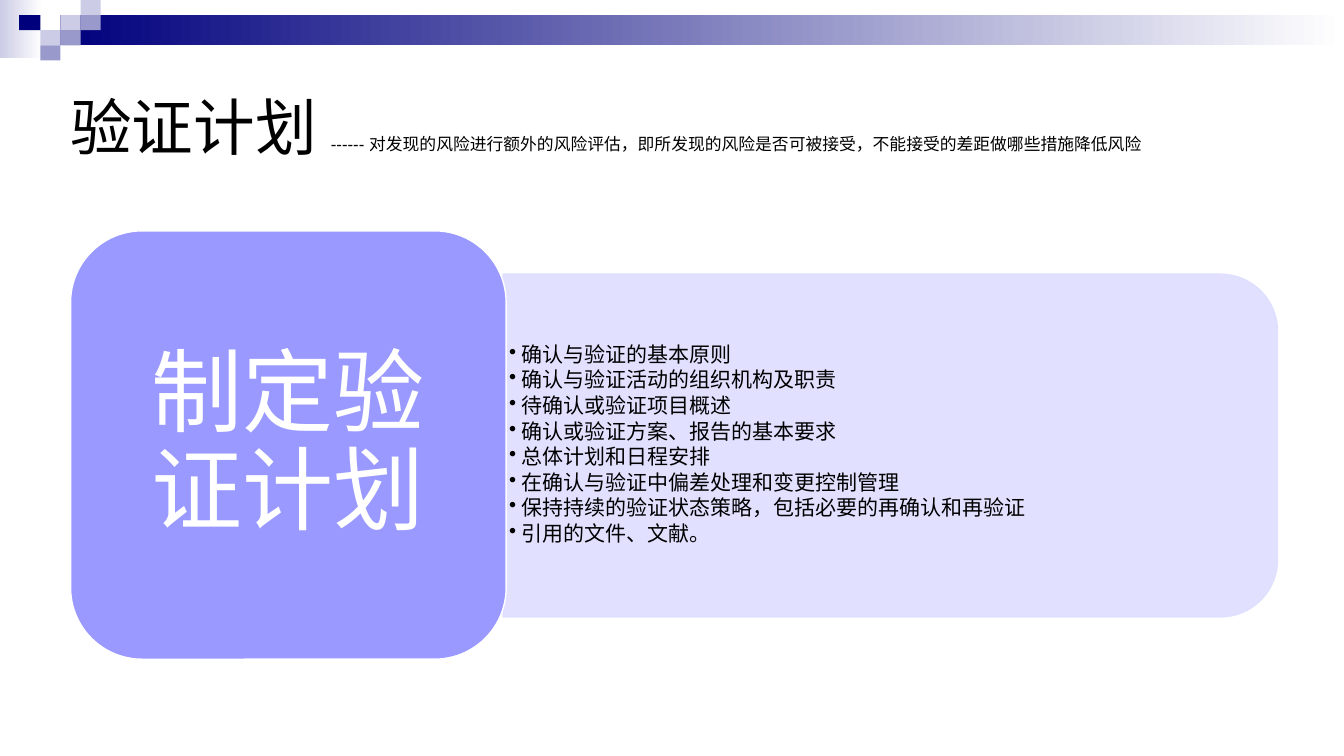
"""Build the validation plan slide."""
from dataclasses import dataclass
from typing import Optional

from lxml import etree
from pptx import Presentation
from pptx.dml.color import RGBColor
from pptx.enum.shapes import MSO_SHAPE
from pptx.enum.text import MSO_ANCHOR, PP_ALIGN
from pptx.oxml.ns import qn
from pptx.util import Inches, Pt

RECT = MSO_SHAPE.RECTANGLE
ROUND = MSO_SHAPE.ROUNDED_RECTANGLE
ROUND_TOP = MSO_SHAPE.ROUND_2_SAME_RECTANGLE
MIDDLE = MSO_ANCHOR.MIDDLE
LEFT, CENTER = PP_ALIGN.LEFT, PP_ALIGN.CENTER

COL, ROW = 0.2, 0.15


@dataclass(frozen=True)
class Theme:
    """Colours, font and type sizes."""
    navy: str = "00007D"
    steel: str = "9999CC"
    mist: str = "CCCCE6"
    violet: str = "9999FF"
    lilac: str = "DEDEFF"
    white: str = "FFFFFF"
    black: str = "000000"
    font: str = "Arial"
    title: float = 44
    note: float = 12
    item: float = 15
    heading: float = 65


@dataclass(frozen=True)
class Box:
    """A place in grid columns and rows."""
    col: float
    row: float
    cols: float = 1
    rows: float = 1

    def emu(self) -> tuple:
        """Return left, top, width and height."""
        return (Inches(self.col * COL), Inches(self.row * ROW),
                Inches(self.cols * COL), Inches(self.rows * ROW))


@dataclass(frozen=True)
class Tile:
    """A header rectangle, fading to a second colour if one is given."""
    box: Box
    color: str
    fade: Optional[str] = None


T = Theme()
TILES = [
    Tile(Box(0, 0, 2.1, 3.87), T.mist, T.white),
    Tile(Box(3, 1, 63.65, 2), T.navy, T.white),
    Tile(Box(3, 1), T.mist),
    Tile(Box(4, 0), T.mist),
    Tile(Box(4, 1), T.steel),
    Tile(Box(2, 2), T.mist),
    Tile(Box(0.95, 1, 1.05), T.navy),
    Tile(Box(3, 2), T.steel),
    Tile(Box(2, 3), T.steel),
]
TITLE = Box(3, 3.33, 60, 10)
PANEL = Box(24.95, 18.13, 38.4, 22.67)
LIST = Box(24.95, 19.2, 37.55, 20.47)
CARD = Box(3.5, 15.27, 21.6, 28.33)

ITEMS = [
    "确认与验证的基本原则",
    "确认与验证活动的组织机构及职责",
    "待确认或验证项目概述",
    "确认或验证方案、报告的基本要求",
    "总体计划和日程安排",
    "在确认与验证中偏差处理和变更控制管理",
    "保持持续的验证状态策略，包括必要的再确认和再验证",
    "引用的文件、文献。",
]


def rgb(color: str) -> RGBColor:
    """Return a colour object."""
    return RGBColor.from_string(color)


def add_block(slide, box: Box, color: str, *, kind=RECT, fade: Optional[str] = None,
              line: Optional[str] = None):
    """Add a filled preset shape."""
    sp = slide.shapes.add_shape(kind, *box.emu())
    sp.shadow.inherit = False
    if fade:
        sp.fill.gradient()
        sp.fill.gradient_angle = 0
        for stop, c in zip(sp.fill.gradient_stops, (color, fade)):
            stop.color.rgb = rgb(c)
    else:
        sp.fill.solid()
        sp.fill.fore_color.rgb = rgb(color)
    if line:
        sp.line.color.rgb = rgb(line)
        sp.line.width = Pt(1)
    else:
        sp.line.fill.background()
    return sp


def add_panel(slide, box: Box) -> None:
    """Add the translucent panel, turned so its round corners face right."""
    sp = add_block(slide, box, T.lilac, kind=ROUND_TOP, line=T.lilac)
    left, top, width, height = box.emu()
    sp.left, sp.top = left + (width - height) // 2, top + (height - width) // 2
    sp.width, sp.height = height, width
    sp.rotation = 90
    for clr in sp._element.spPr.iter(qn("a:srgbClr")):
        etree.SubElement(clr, qn("a:alpha"), val="90000")


def set_frame(sp, inset_x: float, inset_y: float):
    """Set wrapping, anchor and insets, and return the text frame."""
    tf = sp.text_frame
    tf.word_wrap = True
    tf.vertical_anchor = MIDDLE
    tf.margin_left = tf.margin_right = Inches(inset_x)
    tf.margin_top = tf.margin_bottom = Inches(inset_y)
    return tf


def add_text(p, text: str, *, size: float, color: str = T.black, align=LEFT,
             spacing: float = 1.0, after: float = 0) -> None:
    """Add a formatted run to a paragraph."""
    p.alignment = align
    p.line_spacing = spacing
    p.space_after = Pt(after)
    r = p.add_run()
    r.text = text
    r.font.name = T.font
    r.font.size = Pt(size)
    r.font.color.rgb = rgb(color)


def add_bullet(p, indent: float) -> None:
    """Give a paragraph a hanging bullet."""
    pPr = p._p.get_or_add_pPr()
    pPr.set("marL", str(Inches(indent)))
    pPr.set("indent", str(-Inches(indent)))
    etree.SubElement(pPr, qn("a:buChar"), char="•")


def main() -> None:
    """Draw the slide and save it."""
    prs = Presentation()
    prs.slide_width, prs.slide_height = Inches(13.33), Inches(7.5)
    slide = prs.slides.add_slide(prs.slide_layouts[6])

    for tile in TILES:
        add_block(slide, tile.box, tile.color, fade=tile.fade)

    tf = set_frame(slide.shapes.add_textbox(*TITLE.emu()), 0.1, 0.05)
    p = tf.paragraphs[0]
    add_text(p, "验证计划 ", size=T.title)
    add_text(p, "------ 对发现的风险进行额外的风险评估，即所发现的风险是否可被接受，"
                "不能接受的差距做哪些措施降低风险", size=T.note)

    add_panel(slide, PANEL)
    tf = set_frame(slide.shapes.add_textbox(*LIST.emu()), 0.06, 0.03)
    for i, item in enumerate(ITEMS):
        p = tf.add_paragraph() if i else tf.paragraphs[0]
        add_text(p, item, size=T.item, spacing=0.9, after=2.1)
        add_bullet(p, 0.12)

    sp = add_block(slide, CARD, T.violet, kind=ROUND, line=T.white)
    tf = set_frame(sp, 0.27, 0.14)
    add_text(tf.paragraphs[0], "制定验证计划", size=T.heading, color=T.white,
             align=CENTER, spacing=0.9)

    prs.save("out.pptx")


if __name__ == "__main__":
    main()
